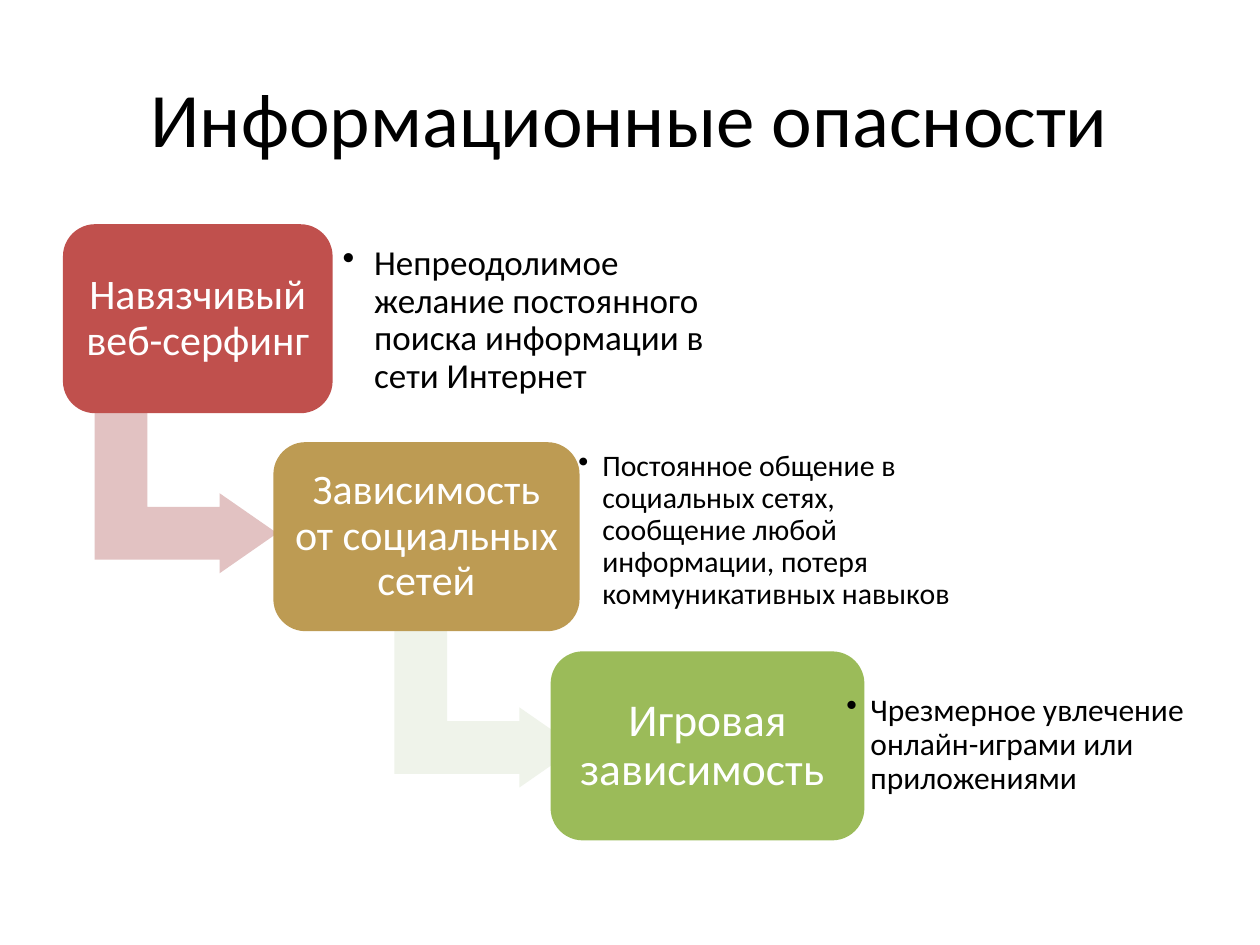
from lxml import etree
from pptx import Presentation
from pptx.dml.color import RGBColor
from pptx.enum.shapes import MSO_SHAPE
from pptx.enum.text import MSO_ANCHOR, PP_ALIGN
from pptx.oxml.ns import qn
from pptx.util import Inches, Pt

ROUNDED = MSO_SHAPE.ROUNDED_RECTANGLE
BENT_ARROW = MSO_SHAPE.BENT_UP_ARROW
MIDDLE = MSO_ANCHOR.MIDDLE
LEFT, CENTER = PP_ALIGN.LEFT, PP_ALIGN.CENTER

BLACK = RGBColor(0x00, 0x00, 0x00)
WHITE = RGBColor(0xFF, 0xFF, 0xFF)
RED = RGBColor(0xC0, 0x50, 0x4D)
GOLD = RGBColor(0xBD, 0x9B, 0x53)
GREEN = RGBColor(0x9B, 0xBB, 0x59)
PALE_RED = RGBColor(0xE2, 0xC2, 0xC2)
PALE_GREEN = RGBColor(0xEF, 0xF3, 0xEA)

FONT = "Calibri"
PAGE_WIDTH, PAGE_HEIGHT = Inches(10), Inches(7.5)
COLUMNS, ROWS = 100, 75
STEP_ROWS = 15
ARROW_SIZE = (12.7, 14.5)

# Step: left column, top row, columns wide, colour, label, size, inset in inches
STEPS = [
    (5, 17.8, 21.4, RED, "Навязчивый веб-серфинг", 24, 0.1),
    (21.7, 35.1, 24.3, GOLD, "Зависимость от социальных сетей", 24, 0.08),
    (43.7, 51.7, 24.9, GREEN, "Игровая зависимость ", 26, 0.11),
]
# Detail: place on the grid, text, size, inset and bullet indent in inches
DETAILS = [
    ((26.4, 19.4, 34, 12.1),
     "Непреодолимое желание постоянного поиска информации в сети Интернет",
     20, 0.08, 0.25),
    ((45, 34.5, 31.4, 15.3),
     "Постоянное общение в социальных сетях, сообщение любой информации, "
     "потеря коммуникативных навыков", 17, 0.09, 0.19),
    ((66.2, 53.1, 29, 12.1),
     "Чрезмерное увлечение онлайн-играми или приложениями", 18, 0.1, 0.19),
]
ARROWS = [(8.4, 31.9, PALE_RED), (32.2, 48.9, PALE_GREEN)]


def grid(left, top, width, height):
    """Turn columns and rows into slide lengths."""
    column, row = PAGE_WIDTH / COLUMNS, PAGE_HEIGHT / ROWS
    return (round(left * column), round(top * row),
            round(width * column), round(height * row))


def write(box, text, *, size, color=BLACK, align=CENTER, inset=0.1,
          spacing=0.9, indent=None):
    """Fill a box with one paragraph, bulleted when an indent is given."""
    frame = box.text_frame
    frame.word_wrap = True
    frame.vertical_anchor = MIDDLE
    frame.margin_left = frame.margin_right = Inches(inset)
    frame.margin_top = frame.margin_bottom = Inches(inset)
    para = frame.paragraphs[0]
    para.alignment = align
    para.line_spacing = spacing
    span = para.add_run()
    span.text = text
    span.font.name = FONT
    span.font.size = Pt(size)
    span.font.color.rgb = color
    if indent:
        para.level = 1
        props = para._p.get_or_add_pPr()
        props.set("marL", str(Inches(indent)))
        props.set("indent", str(-Inches(indent)))
        etree.SubElement(props, qn("a:buChar"), char="•")


def add_text(page, place, text, **style):
    write(page.shapes.add_textbox(*grid(*place)), text, **style)


def add_block(page, kind, place, color, adjustments):
    block = page.shapes.add_shape(kind, *grid(*place))
    block.shadow.inherit = False
    block.fill.solid()
    block.fill.fore_color.rgb = color
    block.line.fill.background()
    for index, value in enumerate(adjustments):
        block.adjustments[index] = value
    return block


def add_arrow(page, left, top, color):
    arrow = add_block(page, BENT_ARROW, (left, top, *ARROW_SIZE), color,
                      (0.33, 0.25, 0.36))
    arrow.rotation = 90


def add_step(page, left, top, width, color, label, size, inset):
    step = add_block(page, ROUNDED, (left, top, width, STEP_ROWS), color, (0.17,))
    write(step, label, size=size, color=WHITE, inset=inset)


def main():
    deck = Presentation()
    deck.slide_width, deck.slide_height = PAGE_WIDTH, PAGE_HEIGHT
    page = deck.slides.add_slide(deck.slide_layouts[6])

    add_text(page, (5, 3, 90, 12.5), "Информационные опасности",
             size=44, spacing=1.0)
    for arrow in ARROWS:
        add_arrow(page, *arrow)
    for step in STEPS:
        add_step(page, *step)
    for place, text, size, inset, indent in DETAILS:
        add_text(page, place, text, size=size, align=LEFT, inset=inset,
                 indent=indent)
    deck.save("out.pptx")


if __name__ == "__main__":
    main()
